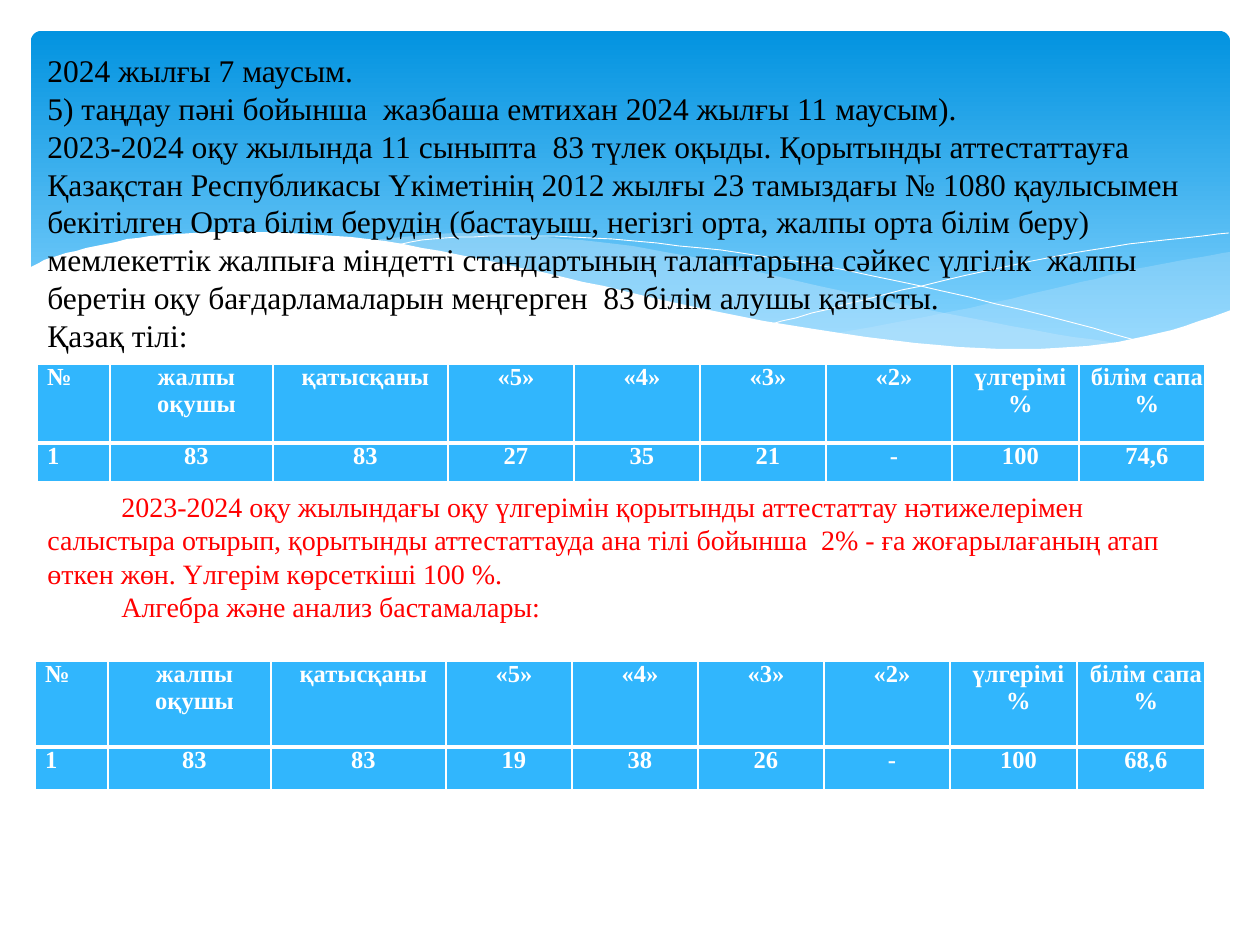
from dataclasses import dataclass

from lxml import etree
from pptx import Presentation
from pptx.dml.color import RGBColor
from pptx.enum.shapes import MSO_SHAPE
from pptx.enum.text import MSO_ANCHOR, PP_ALIGN
from pptx.oxml.ns import qn
from pptx.util import Pt

PX = 914400 / 126
ROUNDED = MSO_SHAPE.ROUNDED_RECTANGLE
TOP = MSO_ANCHOR.TOP
CENTER, JUSTIFY = PP_ALIGN.CENTER, PP_ALIGN.JUSTIFY
FONT = "Times New Roman"
COLORS = {
    "sky_top": "0293E0", "sky_bottom": "83D3FE", "wave": "C6E7FC",
    "white": "FFFFFF", "cell": "31B6FD", "black": "000000", "red": "FF0000",
}
Points = list[tuple[int, int]]


@dataclass
class Wave:
    curves: list[Points]
    fill: str | None = None
    alpha: int = 100
    closed: bool = True


@dataclass
class Results:
    left: int
    top: int
    width: int
    row_heights: tuple[int, int]
    values: list[str]


@dataclass
class Passage:
    box: tuple[int, int, int, int]
    size: int
    color: str
    first_line: int
    paragraphs: list[str]


WAVES = [
    Wave([[(1230, 252), (1178, 261), (1123, 272), (1048, 290), (949, 312), (833, 334)],
          [(833, 334), (906, 343), (969, 349), (1038, 349), (1110, 344), (1169, 331),
           (1230, 311)]], "wave", 29),
    Wave([[(1125, 344), (1055, 334), (934, 311), (793, 280), (699, 258), (616, 244),
           (529, 236), (455, 233), (360, 241)],
          [(360, 241), (431, 251), (509, 266), (619, 292), (736, 318), (838, 335),
           (927, 347), (1003, 350), (1068, 349), (1125, 344)]], "wave", 40),
    Wave([[(389, 246), (433, 239), (505, 236), (591, 238), (701, 248), (801, 262),
           (916, 285), (1047, 316), (1143, 343)]], closed=False),
    Wave([[(772, 324), (847, 304), (942, 281), (1053, 257), (1147, 242), (1229, 233)]],
         closed=False),
    Wave([[(1231, 310), (1172, 330), (1103, 344), (1019, 349), (915, 343), (789, 325),
           (667, 301), (563, 277), (460, 255), (368, 239), (290, 233), (223, 232),
           (150, 236), (96, 246), (50, 258), (29, 268)],
          [(29, 415), (1231, 415)]], "white"),
]
HEADERS = ["№", "жалпы оқушы", "қатысқаны", "«5»", "«4»", "«3»", "«2»",
           "үлгерімі %", "білім сапа %"]
COLUMN_WIDTHS = [73, 163, 175, 126, 126, 126, 126, 127]
KAZAKH = Results(37, 364, 1168, (79, 39),
                 ["1", "83", "83", "27", "35", "21", "-", "100", "74,6"])
ALGEBRA = Results(35, 661, 1170, (86, 43),
                  ["1", "83", "83", "19", "38", "26", "-", "100", "68,6"])
EXAM_INTRO = Passage((35, 45, 1181, 318), 18, "black", 0, [
    "2024 жылғы 7 маусым.",
    "5) таңдау пәні бойынша  жазбаша емтихан 2024 жылғы 11 маусым).",
    "2023-2024 оқу жылында 11 сыныпта  83 түлек оқыды. Қорытынды аттестаттауға "
    "Қазақстан Республикасы Үкіметінің 2012 жылғы 23 тамыздағы № 1080 қаулысымен "
    "бекітілген Орта білім берудің (бастауыш, негізгі орта, жалпы орта білім беру) "
    "мемлекеттік жалпыға міндетті стандартының талаптарына сәйкес үлгілік  жалпы  "
    "беретін оқу бағдарламаларын меңгерген  83 білім алушы қатысты.",
    "Қазақ тілі:",
])
COMPARISON = Passage((35, 483, 1181, 186), 16, "red", 74, [
    "2023-2024 оқу жылындағы оқу үлгерімін қорытынды аттестаттау нәтижелерімен "
    "салыстыра отырып, қорытынды аттестаттауда ана тілі бойынша  2% - ға "
    "жоғарылағаның атап өткен жөн. Үлгерім көрсеткіші 100 %.",
    "Алгебра және анализ бастамалары:",
])


def emu(px: float) -> int:
    return round(px * PX)


def rgb(name: str) -> RGBColor:
    return RGBColor.from_string(COLORS[name])


def smooth(knots: Points, steps: int = 5) -> list[tuple[float, float]]:
    """Sample a Catmull-Rom curve through the knots."""
    if len(knots) < 3:
        return knots
    padded = [knots[0], *knots, knots[-1]]
    curve = [knots[0]]
    for a, b, c, d in zip(padded, padded[1:], padded[2:], padded[3:]):
        for step in range(1, steps + 1):
            t = step / steps
            curve.append(tuple(
                (2 * q + (r - p) * t + (2 * p - 5 * q + 4 * r - s) * t ** 2
                 + (3 * q - p - 3 * r + s) * t ** 3) / 2
                for p, q, r, s in zip(a, b, c, d)))
    return curve


def draw_sky(slide) -> None:
    sky = slide.shapes.add_shape(ROUNDED, *map(emu, (31, 31, 1199, 340)))
    sky.adjustments[0] = 0.03
    sky.shadow.inherit = False
    sky.line.fill.background()
    sky.fill.gradient()
    sky.fill.gradient_angle = 270
    for stop, name, position in zip(sky.fill.gradient_stops,
                                    ("sky_top", "sky_bottom"), (0, 0.9)):
        stop.color.rgb = rgb(name)
        stop.position = position


def draw_wave(slide, wave: Wave) -> None:
    outline = [point for knots in wave.curves for point in smooth(knots)]
    builder = slide.shapes.build_freeform(*outline[0], scale=PX)
    builder.add_line_segments(outline[1:], close=wave.closed)
    shape = builder.convert_to_shape()
    shape.shadow.inherit = False
    if wave.fill is None:
        shape.fill.background()
        shape.line.color.rgb = rgb("white")
        shape.line.width = Pt(0.5)
        return
    shape.line.fill.background()
    shape.fill.solid()
    shape.fill.fore_color.rgb = rgb(wave.fill)
    if wave.alpha < 100:
        color = shape.fill._xPr.find(f"{qn('a:solidFill')}/{qn('a:srgbClr')}")
        etree.SubElement(color, qn("a:alpha"), val=str(wave.alpha * 1000))


def write(paragraph, text: str, size: int, color: str, bold: bool = False) -> None:
    run = paragraph.add_run()
    run.text = text
    run.font.color.rgb = rgb(color)
    for key, value in {"name": FONT, "size": Pt(size), "bold": bold}.items():
        setattr(run.font, key, value)


def draw_passage(slide, passage: Passage) -> None:
    frame = slide.shapes.add_textbox(*map(emu, passage.box)).text_frame
    for key, value in {"word_wrap": True, "vertical_anchor": TOP}.items():
        setattr(frame, key, value)
    for index, text in enumerate(passage.paragraphs):
        paragraph = frame.add_paragraph() if index else frame.paragraphs[0]
        paragraph._p.get_or_add_pPr().set("indent", str(emu(passage.first_line)))
        write(paragraph, text, passage.size, passage.color)


def set_borders(cell, top: int, bottom: int) -> None:
    properties = cell._tc.get_or_add_tcPr()
    widths = {"a:lnL": 1, "a:lnR": 1, "a:lnT": top, "a:lnB": bottom}
    for index, (tag, width) in enumerate(widths.items()):
        line = etree.Element(qn(tag), w=str(Pt(width)))
        fill = etree.SubElement(line, qn("a:solidFill"))
        etree.SubElement(fill, qn("a:srgbClr"), val=COLORS["white"])
        properties.insert(index, line)


def draw_results(slide, results: Results) -> None:
    rows = [HEADERS, results.values]
    place = (results.left, results.top, results.width, sum(results.row_heights))
    table = slide.shapes.add_table(len(rows), len(HEADERS), *map(emu, place)).table
    widths = [*COLUMN_WIDTHS, results.width - sum(COLUMN_WIDTHS)]
    for column, width in zip(table.columns, widths):
        column.width = emu(width)
    for r, texts in enumerate(rows):
        table.rows[r].height = emu(results.row_heights[r])
        for c, text in enumerate(texts):
            cell = table.cell(r, c)
            for side in ("left", "right", "top", "bottom"):
                setattr(cell, f"margin_{side}", 0)
            cell.fill.solid()
            cell.fill.fore_color.rgb = rgb("cell")
            set_borders(cell, *((3, 1) if r else (1, 3)))
            paragraph = cell.text_frame.paragraphs[0]
            paragraph.alignment = CENTER if c else JUSTIFY
            paragraph._p.get_or_add_pPr().set("marL", str(emu(10)))
            write(paragraph, text, 14, "white", bold=True)


def main() -> None:
    deck = Presentation()
    deck.slide_width, deck.slide_height = emu(1260), emu(945)
    slide = deck.slides.add_slide(deck.slide_layouts[6])
    draw_sky(slide)
    for wave in WAVES:
        draw_wave(slide, wave)
    draw_passage(slide, EXAM_INTRO)
    for results in (KAZAKH, ALGEBRA):
        draw_results(slide, results)
    draw_passage(slide, COMPARISON)
    deck.save("out.pptx")


if __name__ == "__main__":
    main()
